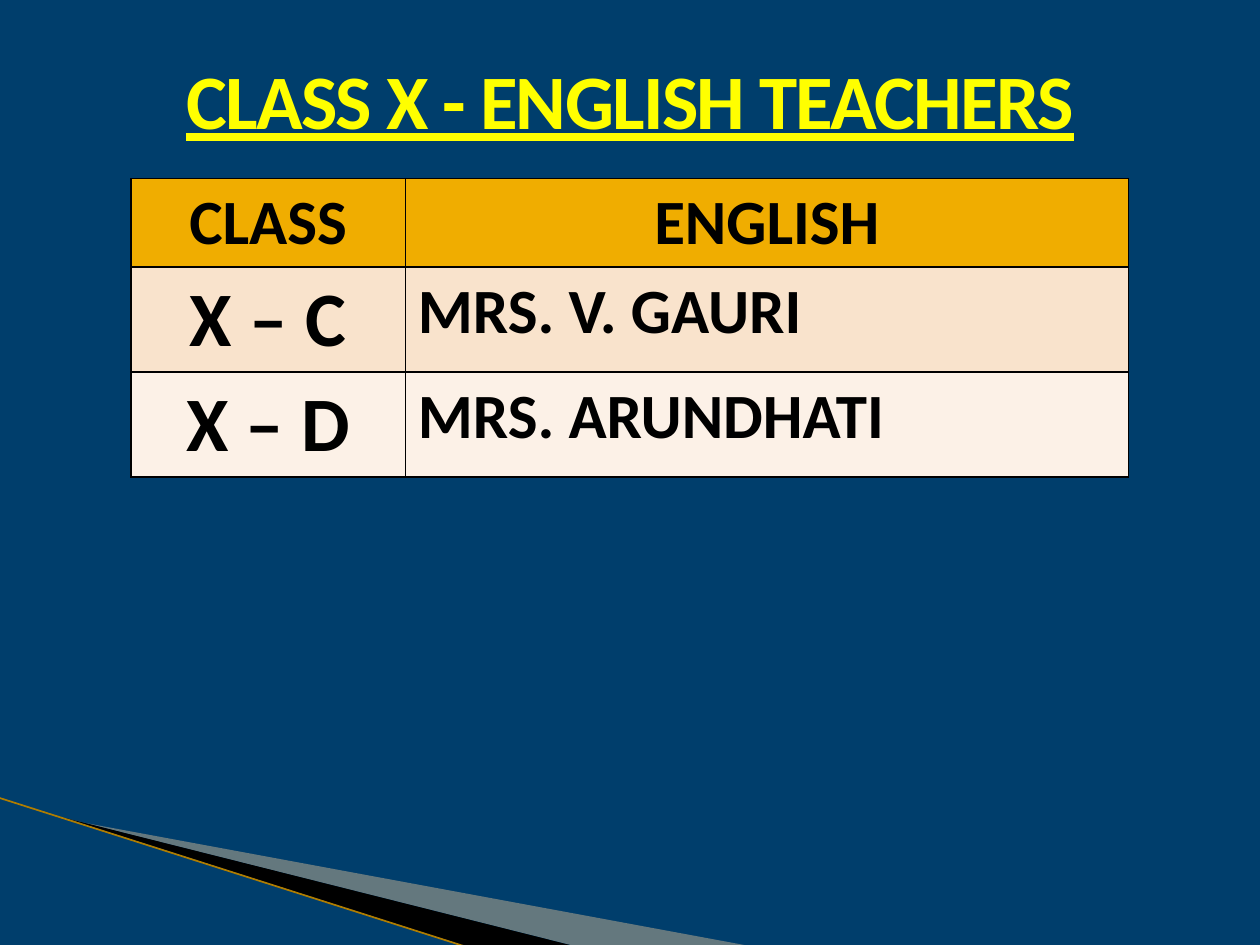
from pptx import Presentation
from pptx.dml.color import RGBColor
from pptx.enum.shapes import MSO_CONNECTOR as CONNECTOR
from pptx.enum.text import PP_ALIGN as ALIGN
from pptx.oxml.ns import qn
from pptx.util import Cm, Pt
from lxml.etree import SubElement

COLORS = {
    "background": "003E6C", "title": "FFFF00", "text": "000000",
    "header": "F0AD00", "odd": "F9E3CC", "even": "FCF1E7",
    "border": "000000", "pale": "FCCF9B", "dark": "000000", "edge": "B07D00",
}
ROWS = [("CLASS", "ENGLISH"), ("X – C", "MRS. V. GAURI"), ("X – D", "MRS. ARUNDHATI")]
ROW_FILLS = ["header", "odd", "even"]
COLUMN_WIDTHS = [5.53, 14.58]
ROW_HEIGHTS = [1.78, 2.12, 2.12]
PALE_FRAME = (1.99, 13.89, 10.56, 4.01)
PALE_POINTS = [(1.39, 16.53), (15.11, 19.07), (11.58, 19.07), (1.39, 16.51)]
DARK_FRAME = (-0.15, 16.07, 10.56, 2.33)
DARK_POINTS = [(1.35, 16.5), (11.6, 19.08), (9.44, 19.09), (1.37, 16.51)]


def color(name):
    """Return the named colour."""
    return RGBColor.from_string(COLORS[name])


def paint(fill, name):
    """Give a fill one solid colour."""
    fill.solid()
    fill.fore_color.rgb = color(name)


def write(para, text, name, align, **format_values):
    """Add one formatted span to a paragraph and return it."""
    para.alignment = align
    span = para.add_run()
    span.text = text
    span.font.color.rgb = color(name)
    for key, value in {"name": "Calibri", "bold": True, **format_values}.items():
        setattr(span.font, key, value)
    return span


def set_frame(shape, frame):
    """Change a freeform's frame while its outline stays in place."""
    left, top, width, height = map(Cm, frame)
    for point in shape._element.iter(qn("a:pt")):
        point.set("x", str(int(point.get("x")) + shape.left - left))
        point.set("y", str(int(point.get("y")) + shape.top - top))
    outline = next(shape._element.iter(qn("a:path")))
    outline.set("w", str(width))
    outline.set("h", str(height))
    shape.left, shape.top, shape.width, shape.height = left, top, width, height


def add_wedge(page, points, frame, name, alpha=None):
    """Draw a closed sliver through points in centimetres."""
    start, *others = [(Cm(x), Cm(y)) for x, y in points]
    builder = page.shapes.build_freeform(*start)
    builder.add_line_segments(others, close=True)
    wedge = builder.convert_to_shape()
    set_frame(wedge, frame)
    wedge.shadow.inherit = False
    wedge.line.fill.background()
    paint(wedge.fill, name)
    if alpha is not None:
        tint = wedge.fill._xPr.find(qn("a:solidFill"))[0]
        SubElement(tint, qn("a:alpha"), val=str(alpha * 1000))


def add_edge(page, start, end):
    """Draw the thin line along the wedges."""
    edge = page.shapes.add_connector(CONNECTOR.STRAIGHT, *map(Cm, start + end))
    edge.line.color.rgb = color("edge")
    edge.line.width = Pt(0.95)
    SubElement(edge._element.spPr, qn("a:effectLst"))


def add_title(page, text):
    """Add the underlined heading across the slide."""
    box = page.shapes.add_textbox(0, 0, Cm(25.4), Cm(3.07))
    box.text_frame.word_wrap = True
    para = box.text_frame.paragraphs[0]
    para.line_spacing = 1.5
    span = write(para, text, "title", ALIGN.CENTER, size=Pt(44), underline=True)
    span.font._element.set("spc", "-100")


def add_borders(cell):
    """Outline a cell on its four sides."""
    properties = cell._tc.get_or_add_tcPr()
    for side in ("lnL", "lnR", "lnT", "lnB"):
        line = SubElement(properties, qn(f"a:{side}"), w=str(Pt(1)))
        solid = SubElement(line, qn("a:solidFill"))
        SubElement(solid, qn("a:srgbClr"), val=COLORS["border"])


def add_teacher_table(page):
    """Add the table of classes and teachers."""
    frame = page.shapes.add_table(
        len(ROWS), len(COLUMN_WIDTHS), Cm(2.64), Cm(3.6),
        Cm(sum(COLUMN_WIDTHS)), Cm(sum(ROW_HEIGHTS)))
    table = frame.table
    for column, width in zip(table.columns, COLUMN_WIDTHS):
        column.width = Cm(width)
    for r, (texts, fill, height) in enumerate(zip(ROWS, ROW_FILLS, ROW_HEIGHTS)):
        table.rows[r].height = Cm(height)
        for c, text in enumerate(texts):
            cell = table.cell(r, c)
            add_borders(cell)
            paint(cell.fill, fill)
            align = ALIGN.LEFT if r and c else ALIGN.CENTER
            size = Pt(44 if r and not c else 36)
            write(cell.text_frame.paragraphs[0], text, "text", align, size=size)


def main():
    """Build and save the slide."""
    deck = Presentation()
    deck.slide_width, deck.slide_height = Cm(25.4), Cm(19.05)
    page = deck.slides.add_slide(deck.slide_layouts[6])
    paint(page.background.fill, "background")
    add_wedge(page, PALE_POINTS, PALE_FRAME, "pale", 40)
    add_wedge(page, DARK_POINTS, DARK_FRAME, "dark")
    add_edge(page, (-0.03, 16.08), (9.44, 19.1))
    add_title(page, "CLASS X - ENGLISH TEACHERS")
    add_teacher_table(page)
    deck.save("out.pptx")


if __name__ == "__main__":
    main()
